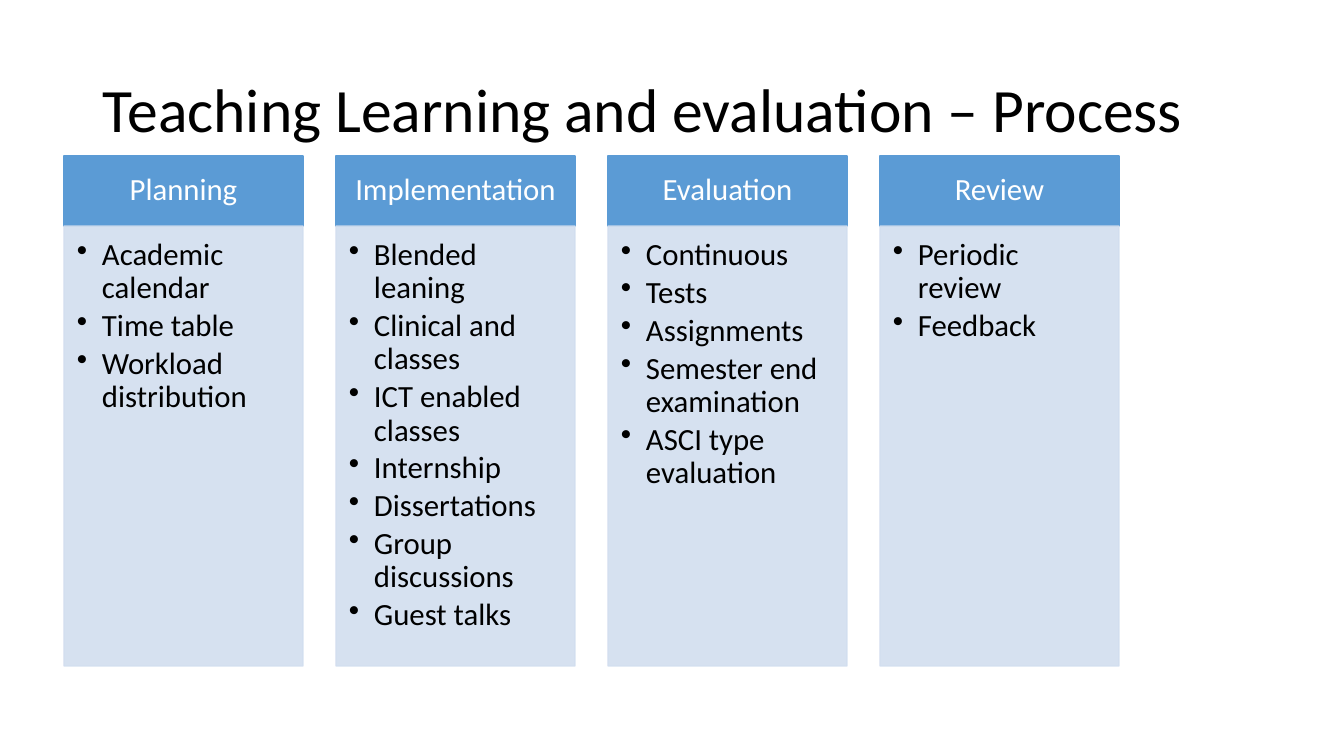
import pptx
import pptx.dml.color
import pptx.enum.shapes
import pptx.enum.text
import pptx.oxml
import pptx.oxml.ns
import pptx.util

SLIDE_WIDTH, SLIDE_HEIGHT = 1344, 756
EMU_PER_PX = 12192000 / SLIDE_WIDTH
COLORS = {"text": "000000", "header": "5B9BD5", "header_text": "FFFFFF", "panel": "D2DEEF"}
STAGES = {
    "Planning": ["Academic calendar", "Time table", "Workload distribution"],
    "Implementation": [
        "Blended leaning", "Clinical and classes", "ICT enabled classes", "Internship",
        "Dissertations", "Group discussions", "Guest talks",
    ],
    "Evaluation": [
        "Continuous", "Tests", "Assignments", "Semester end examination", "ASCI type evaluation",
    ],
    "Review": ["Periodic review", "Feedback"],
}
COLUMN_LEFT, COLUMN_PITCH, COLUMN_WIDTH = 64, 272, 239
HEADER_TOP, HEADER_HEIGHT, PANEL_HEIGHT = 156, 70, 440


def px(length):
    return pptx.util.Emu(round(length * EMU_PER_PX))


class ProcessSlide:
    """Draws the title, headers and bulleted panels of a process slide."""

    font = "Calibri"

    def __init__(self, slide):
        self.slide = slide

    def set_text(self, frame, lines, size, color, anchor, align, insets):
        frame.word_wrap = True
        frame.vertical_anchor = anchor
        frame.margin_left, frame.margin_top, frame.margin_right, frame.margin_bottom = map(px, insets)
        frame.text = "\n".join(lines)
        for paragraph in frame.paragraphs:
            paragraph.alignment = align
            paragraph.line_spacing = 0.9
            for run in paragraph.runs:
                run.font.name = self.font
                run.font.size = pptx.util.Pt(size)
                run.font.color.rgb = pptx.dml.color.RGBColor.from_string(COLORS[color])

    def title(self, text, box):
        heading = self.slide.shapes.add_textbox(*map(px, box))
        self.set_text(heading.text_frame, [text], 44, "text", pptx.enum.text.MSO_ANCHOR.MIDDLE,
                      pptx.enum.text.PP_ALIGN.LEFT, (10, 5, 10, 5))

    def block(self, box, color):
        block = self.slide.shapes.add_shape(pptx.enum.shapes.MSO_SHAPE.RECTANGLE, *map(px, box))
        block.shadow.inherit = False
        block.fill.solid()
        block.line.fill.solid()
        block.line.width = pptx.util.Pt(1)
        for paint in (block.fill, block.line.fill):
            paint.fore_color.rgb = pptx.dml.color.RGBColor.from_string(COLORS[color])
        return block

    def header(self, text, box):
        header = self.block(box, "header")
        self.set_text(header.text_frame, [text], 22, "header_text", pptx.enum.text.MSO_ANCHOR.MIDDLE,
                      pptx.enum.text.PP_ALIGN.CENTER, (17, 10, 17, 10))

    def panel(self, activities, box):
        panel = self.block(box, "panel")
        for color in panel.element.spPr.iter(pptx.oxml.ns.qn("a:srgbClr")):
            color.append(pptx.oxml.parse_xml(f'<a:alpha {pptx.oxml.ns.nsdecls("a")} val="90000"/>'))
        self.set_text(panel.text_frame, activities, 22, "text", pptx.enum.text.MSO_ANCHOR.TOP,
                      pptx.enum.text.PP_ALIGN.LEFT, (13, 13, 17, 19))
        for paragraph in panel.text_frame.paragraphs:
            paragraph.level = 1
            paragraph.space_after = pptx.util.Pt(3.3)
            properties = paragraph._p.get_or_add_pPr()
            properties.set("marL", str(px(25)))
            properties.set("indent", str(px(-25)))
            properties.append(pptx.oxml.parse_xml(f'<a:buChar {pptx.oxml.ns.nsdecls("a")} char="•"/>'))


def main():
    presentation = pptx.Presentation()
    presentation.slide_width, presentation.slide_height = px(SLIDE_WIDTH), px(SLIDE_HEIGHT)
    process = ProcessSlide(presentation.slides.add_slide(presentation.slide_layouts[6]))
    process.title("Teaching Learning and evaluation – Process", (93, 40, 1159, 146))
    for index, (stage, activities) in enumerate(STAGES.items()):
        left = COLUMN_LEFT + index * COLUMN_PITCH
        process.header(stage, (left, HEADER_TOP, COLUMN_WIDTH, HEADER_HEIGHT))
        process.panel(activities, (left, HEADER_TOP + HEADER_HEIGHT, COLUMN_WIDTH, PANEL_HEIGHT))
    presentation.save("out.pptx")


if __name__ == "__main__":
    main()
